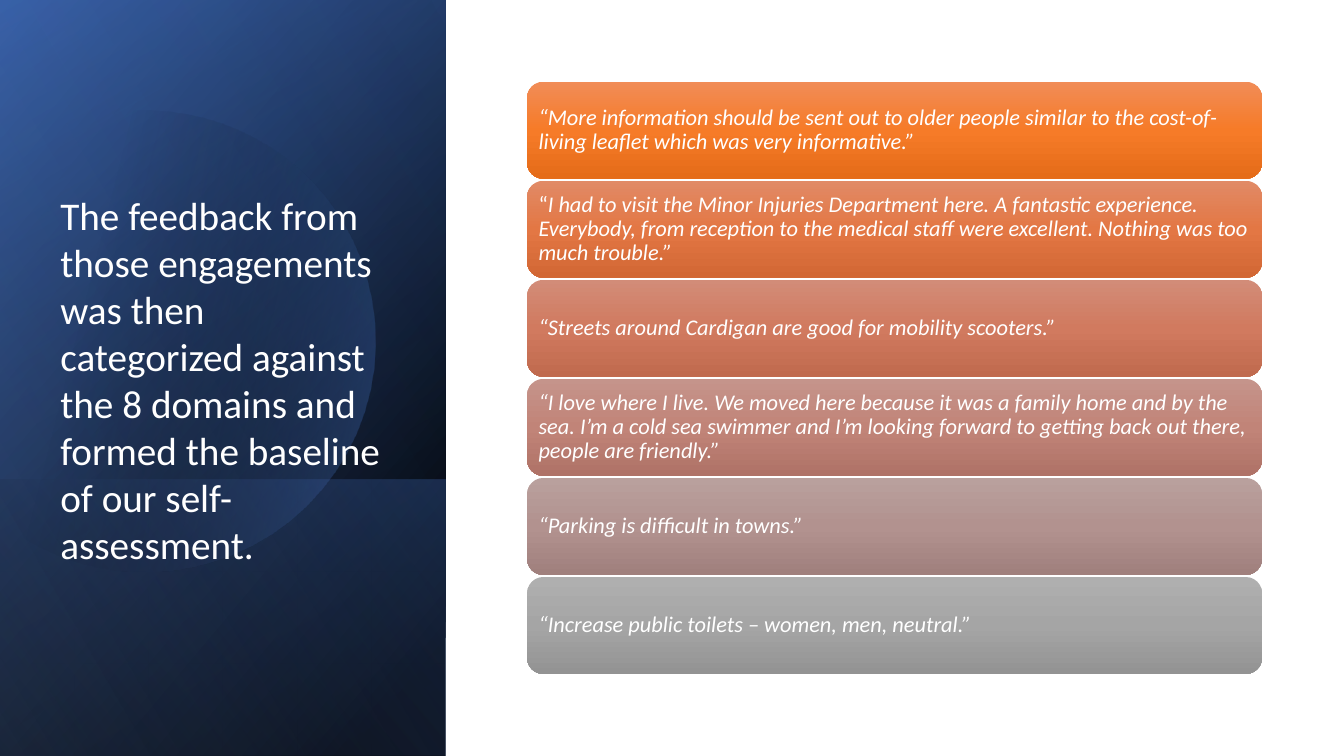
from lxml import etree
from pptx import Presentation
from pptx.dml.color import RGBColor as Color
from pptx.enum.shapes import MSO_SHAPE as Shape
from pptx.enum.text import MSO_ANCHOR as Anchor, PP_ALIGN as Align
from pptx.oxml.ns import qn
from pptx.util import Pt

BLACK = Color(0x00, 0x00, 0x00)
WHITE = Color(0xFF, 0xFF, 0xFF)
NAVY = Color(0x2F, 0x55, 0x97)
BLUE = Color(0x44, 0x72, 0xC4)
PALE_BLUE = Color(0x8F, 0xAA, 0xDC)
ORANGE = Color(0xF1, 0x8C, 0x57), Color(0xF6, 0x7B, 0x28), Color(0xE5, 0x6C, 0x19)
RUST = Color(0xE1, 0x8A, 0x66), Color(0xE3, 0x77, 0x44), Color(0xD2, 0x67, 0x34)
CLAY = Color(0xD2, 0x8C, 0x78), Color(0xD1, 0x7A, 0x5F), Color(0xC0, 0x6A, 0x4E)
ROSE = Color(0xC5, 0x94, 0x8B), Color(0xC1, 0x84, 0x78), Color(0xAF, 0x72, 0x67)
MAUVE = Color(0xB9, 0xA0, 0x9D), Color(0xB2, 0x92, 0x8F), Color(0xA0, 0x80, 0x7D)
GREY = Color(0xAF, 0xAF, 0xAF), Color(0xA5, 0xA5, 0xA5), Color(0x93, 0x93, 0x93)


def paint_gradient(shape, angle, stops):
    shape.shadow.inherit = False
    shape.line.fill.background()
    shape.fill.gradient()
    gradient = shape.element.spPr.find(qn("a:gradFill"))
    gradient.set("rotWithShape", "1")
    for child in list(gradient):
        gradient.remove(child)
    stop_list = etree.SubElement(gradient, qn("a:gsLst"))
    for position, color, opacity in stops:
        stop = etree.SubElement(stop_list, qn("a:gs"), pos=str(position * 1000))
        tone = etree.SubElement(stop, qn("a:srgbClr"), val=str(color))
        etree.SubElement(tone, qn("a:alpha"), val=str(opacity * 1000))
    etree.SubElement(gradient, qn("a:lin"), ang=str(angle * 60000), scaled="0")


def add_panel(top, height, angle, stops):
    left = (PANEL_WIDTH - height) / 2
    middle = top + height / 2
    panel = slide.shapes.add_shape(
        Shape.RECTANGLE, Pt(left), Pt(middle - PANEL_WIDTH / 2), Pt(height), Pt(PANEL_WIDTH))
    panel.rotation = 90
    panel.element.spPr.find(qn("a:xfrm")).set("flipH", "1")
    paint_gradient(panel, angle, stops)


deck = Presentation()
deck.slide_width, deck.slide_height = Pt(960), Pt(540)
slide = deck.slides.add_slide(deck.slide_layouts[6])

PANEL_WIDTH = 318.3
add_panel(0, 540, 50, [(8, BLACK, 100), (100, NAVY, 100)])
add_panel(0, 540, 30, [(0, BLACK, 0), (99, BLUE, 46)])
add_panel(342.7, 197.3, 130, [(2, BLUE, 29), (100, BLACK, 30)])

disc_start = (107.3, 79.2)
disc_curves = [
    ((177.1, 80.6), (241.2, 127.4), (261.4, 198)),
    ((286.6, 285.8), (236.2, 376.6), (149, 401.8)),
    ((94.3, 417.6), (38.2, 403.9), (-2.2, 370.1)),
    ((-2.2, 370.1), (-10.8, 362.2), (-10.8, 362.2)),
    ((-10.8, 362.2), (-10.8, 126), (-10.8, 126)),
    ((-10.8, 126), (0, 115.9), (0, 115.9)),
    ((16.6, 102.2), (36, 92.2), (57.6, 85.7)),
    ((74.2, 81.4), (90.7, 79.2), (107.3, 79.2)),
]
STEPS = 16
outline = []
start = disc_start
for first, second, end in disc_curves:
    for step in range(1, STEPS + 1):
        t = step / STEPS
        u = 1 - t
        outline.append(tuple(
            Pt(u**3 * a + 3 * u * u * t * b + 3 * u * t * t * c + t**3 * d)
            for a, b, c, d in zip(start, first, second, end)))
    start = end
builder = slide.shapes.build_freeform(Pt(disc_start[0]), Pt(disc_start[1]))
builder.add_line_segments(outline, close=True)
disc = builder.convert_to_shape()
paint_gradient(disc, 14, [(29, BLACK, 0), (100, BLUE, 43)])

add_panel(0, 540, 120, [(0, BLACK, 0), (99, PALE_BLUE, 11)])

title = slide.shapes.add_textbox(Pt(36), Pt(131), Pt(245.5), Pt(278))
title.text_frame.word_wrap = True
title.text_frame.vertical_anchor = Anchor.BOTTOM
title.text_frame.text = (
    "The feedback from those engagements was then categorized against "
    "the 8 domains and formed the baseline of our self-assessment.")
para = title.text_frame.paragraphs[0]
para.space_after = Pt(6)
font = para.runs[0].font
font.name, font.size, font.color.rgb = "Calibri", Pt(28), WHITE

quotes = [
    (ORANGE, ["“More information should be sent out to older people similar to "
              "the cost-of-living leaflet which was very informative.”"]),
    (RUST, ["“", "I had to visit the Minor Injuries Department here. A fantastic "
            "experience. Everybody, from reception to the medical staff were "
            "excellent. Nothing was too much trouble.”"]),
    (CLAY, ["“Streets around Cardigan are good for mobility scooters.”"]),
    (ROSE, ["“I love where I live. We moved here because it was a family home "
            "and by the sea. I’m a cold sea swimmer and I’m looking forward to "
            "getting back out there, people are friendly.”"]),
    (MAUVE, ["“Parking is difficult in towns.”"]),
    (GREY, ["“Increase public toilets – women, men, neutral.”"]),
]
CARD_TOP, CARD_PITCH = 58.4, 70.75
for row, (tones, parts) in enumerate(quotes):
    card = slide.shapes.add_shape(
        Shape.ROUNDED_RECTANGLE, Pt(376.5), Pt(CARD_TOP + row * CARD_PITCH), Pt(525), Pt(69.2))
    paint_gradient(card, 90, [(at, tone, 100) for at, tone in zip((0, 50, 100), tones)])
    frame = card.text_frame
    frame.word_wrap = True
    frame.vertical_anchor = Anchor.MIDDLE
    frame.margin_left = frame.margin_right = Pt(4.8)
    frame.margin_top = frame.margin_bottom = Pt(4.8)
    para = frame.paragraphs[0]
    para.alignment = Align.LEFT
    para.line_spacing = 0.9
    for part in parts:
        span = para.add_run()
        span.text = part
        font = span.font
        font.name, font.size, font.color.rgb = "Calibri", Pt(16), WHITE
        font.italic = part != "“"

deck.save("out.pptx")
